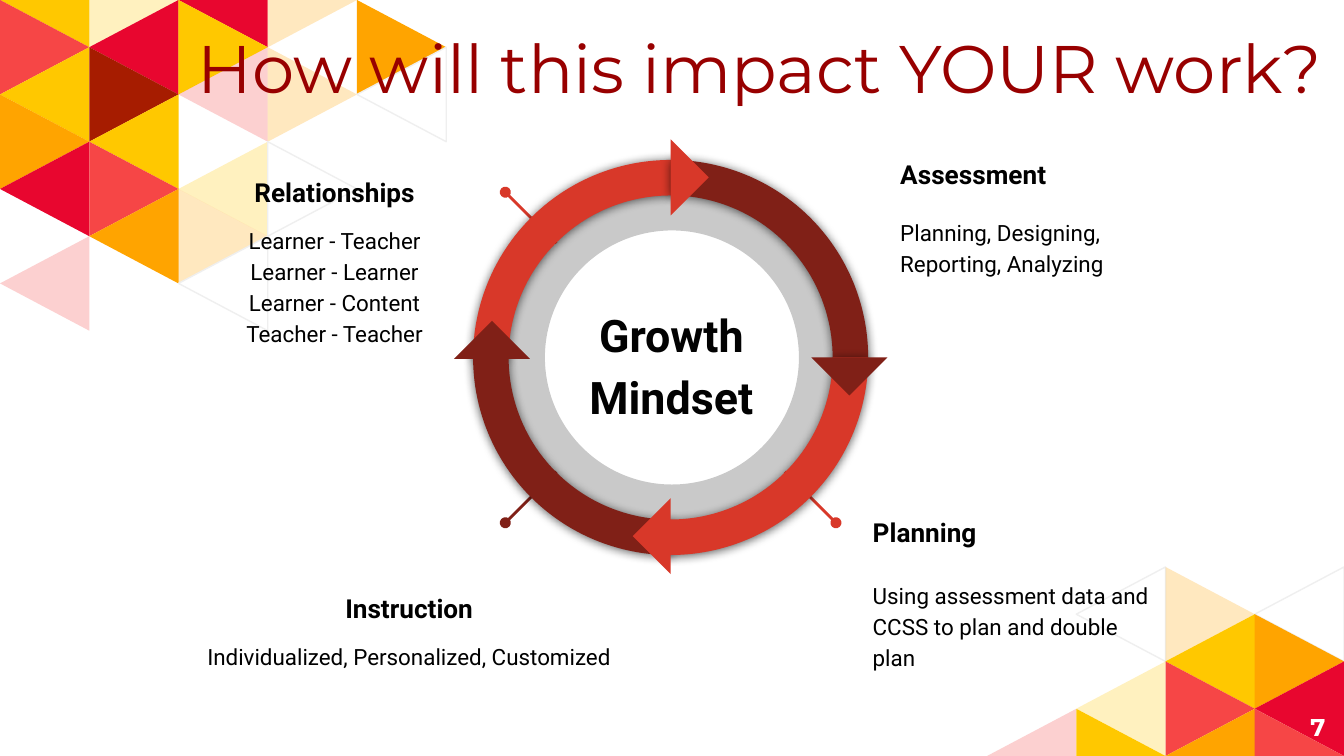
from lxml.etree import SubElement
from pptx import Presentation
from pptx.dml.color import RGBColor as RGB
from pptx.enum.shapes import MSO_CONNECTOR as LINE, MSO_SHAPE as SHAPE
from pptx.enum.text import MSO_ANCHOR as ANCHOR, MSO_AUTO_SIZE as AUTO, PP_ALIGN as ALIGN
from pptx.oxml.ns import qn
from pptx.util import Inches, Pt

COLORS = {
    "Y": "FFC800", "G": "FFA400", "R": "F64646", "E": "E8062F", "D": "A61C00", "W": "FFFFFF",
    "edge": "EFEFEF", "title": "980000", "text": "000000", "center": "020202",
    "bright": "D83829", "dark": "802017",
}

prs = Presentation()
prs.slide_width, prs.slide_height = Inches(10), Inches(10) * 9 // 16
W, H = prs.slide_width, prs.slide_height
u = W / 100
s = prs.slides.add_slide(prs.slide_layouts[5])


def paint(sp, color, alpha=100):
    sp.shadow.inherit = False
    sp.fill.solid()
    sp.fill.fore_color.rgb = RGB.from_string(COLORS[color])
    sp.line.fill.background()
    if alpha < 100:
        clr = sp.element.spPr.xpath("a:solidFill/a:srgbClr")[0]
        SubElement(clr, qn("a:alpha")).set("val", str(alpha * 1000))


def write(sp, text, sizes=(12,), bold=(False,), font="Roboto", color="text",
          align=ALIGN.LEFT, anchor=ANCHOR.TOP, gap=0, spacing=1.15):
    tf = sp.text_frame
    tf.word_wrap, tf.auto_size, tf.vertical_anchor = True, AUTO.NONE, anchor
    tf.margin_left = tf.margin_right = tf.margin_top = tf.margin_bottom = Inches(0.1)
    for i, line in enumerate(text.split("\n")):
        p = tf.add_paragraph() if i else tf.paragraphs[0]
        p.alignment, p.line_spacing = align, spacing
        p.space_before = Pt(gap if i == 1 else 0)
        r = p.add_run()
        r.text = line
        r.font.name, r.font.size = font, Pt(sizes[min(i, len(sizes) - 1)])
        r.font.bold = bold[min(i, len(bold) - 1)]
        r.font.color.rgb = RGB.from_string(COLORS[color])


tri_w, tri_h = W / 15.06, H / 16
mosaics = [
    (W - 4 * tri_w, 12, 0, [".wgw", "..YG", ".yRE", "rYGR"]),
    (0, 0, -1, ["YyEg.", "REY.G", "YDrgw", "GY...", "ERyw.", ".Gg..", "r.w.."]),
]
for left, top, first, rows in mosaics:
    for row, keys in enumerate(rows, first):
        for col, key in enumerate(keys):
            if key == ".":
                continue
            base, tip = left + col * tri_w, left + (col + 1) * tri_w
            if (row + col) % 2:
                base, tip = tip, base
            ys = [min(max((top + row + k) * tri_h, 0), H) for k in range(3)]
            fb = s.shapes.build_freeform(round(base), round(ys[0]))
            fb.add_line_segments([(round(tip), round(ys[1])), (round(base), round(ys[2]))])
            sp = fb.convert_to_shape()
            paint(sp, key.upper(), 25 if key in "ygr" else 100)
            if key == "w":
                sp.line.color.rgb = RGB.from_string(COLORS["edge"])
                sp.line.width = Pt(0.75)

title = s.shapes.title
title.left, title.top, title.width, title.height = (round(n * u) for n in (13.7, 3.6, 86.2, 5.35))
write(title, "How will this impact YOUR work?", sizes=(36,), font="Montserrat", color="title",
      anchor=ANCHOR.BOTTOM, spacing=1)
s.shapes.element.append(title.element)

heading = dict(sizes=(14, 12), bold=(True, False))
texts = [
    ((93.6, 51.9, 6, 4.3), "7", dict(sizes=(13,), bold=(True,), font="Montserrat", color="W",
                                     align=ALIGN.RIGHT, anchor=ANCHOR.MIDDLE, spacing=1)),
    ((66, 10.45, 21.3, 12.1), "Assessment\nPlanning, Designing, Reporting, Analyzing",
     dict(heading, gap=13.5)),
    ((63.95, 37.05, 23.5, 10.5), "Planning\nUsing assessment data and CCSS to plan and double plan",
     dict(heading, gap=16.5)),
    ((13.85, 11.75, 22.1, 15.8),
     "Relationships\nLearner - Teacher\nLearner - Learner\nLearner - Content\nTeacher - Teacher",
     dict(heading, gap=8.3, align=ALIGN.CENTER)),
    ((42.05, 22.5, 15.8, 8.8), "Growth Mindset",
     dict(sizes=(24,), bold=(True,), color="center", align=ALIGN.CENTER, anchor=ANCHOR.MIDDLE)),
    ((13.8, 42.7, 33.3, 8.8), "Instruction\nIndividualized, Personalized, Customized",
     dict(heading, gap=8.3, align=ALIGN.CENTER)),
]
for box, text, style in texts:
    write(s.shapes.add_textbox(*(round(n * u) for n in box)), text, **style)

cx, cy = 49.9, 26.6
donut = s.shapes.add_shape(SHAPE.DONUT, *(round(n * u) for n in (36.1, 12.7, 27.8, 27.8)))
donut.adjustments[0] = 0.16
paint(donut, "text", 21)

pins = [("bright", -1, -1), ("dark", -1, 1), ("bright", 1, 1)]
for color, dx, dy in pins:
    ends = (cx + 12.3 * dx, cy + 12.3 * dy, cx + 8.5 * dx, cy + 8.5 * dy)
    pin = s.shapes.add_connector(LINE.STRAIGHT, *(round(n * u) for n in ends))
    pin.line.color.rgb = RGB.from_string(COLORS[color])
    pin.line.width = Pt(1.5)
    SubElement(pin.element.spPr.find(qn("a:ln")), qn("a:headEnd")).set("type", "oval")
    SubElement(pin.element.spPr, qn("a:effectLst"))

arcs = [(270, "bright"), (0, "dark"), (180, "dark"), (90, "bright")]
for turn, color in arcs:
    arc = s.shapes.add_shape(SHAPE.BLOCK_ARC,
                             *(round(n * u) for n in (cx - 14.7, cy - 14.7, 29.4, 29.4)))
    arc.adjustments[0], arc.adjustments[1], arc.adjustments[2] = 162, 1.2, 0.09
    arc.rotation = turn
    paint(arc, color)
    shadow = SubElement(arc.element.spPr.find(qn("a:effectLst")), qn("a:outerShdw"),
                        blurRad=str(Pt(5.6)), dist=str(Pt(0.8)), dir="5400000", rotWithShape="0")
    clr = SubElement(shadow, qn("a:srgbClr"), val=COLORS["text"])
    SubElement(clr, qn("a:alpha"), val="64000")

arrowheads = [(36.6, 26.7, 135, "dark"), (63.2, 26.6, 315, "dark"),
              (49.9, 39.9, 45, "bright"), (49.9, 13.2, 225, "bright")]
for x, y, turn, color in arrowheads:
    head = s.shapes.add_shape(SHAPE.RIGHT_TRIANGLE,
                              *(round(n * u) for n in (x - 2, y - 2, 4, 4)))
    head.rotation = turn
    paint(head, color)

prs.save("out.pptx")
